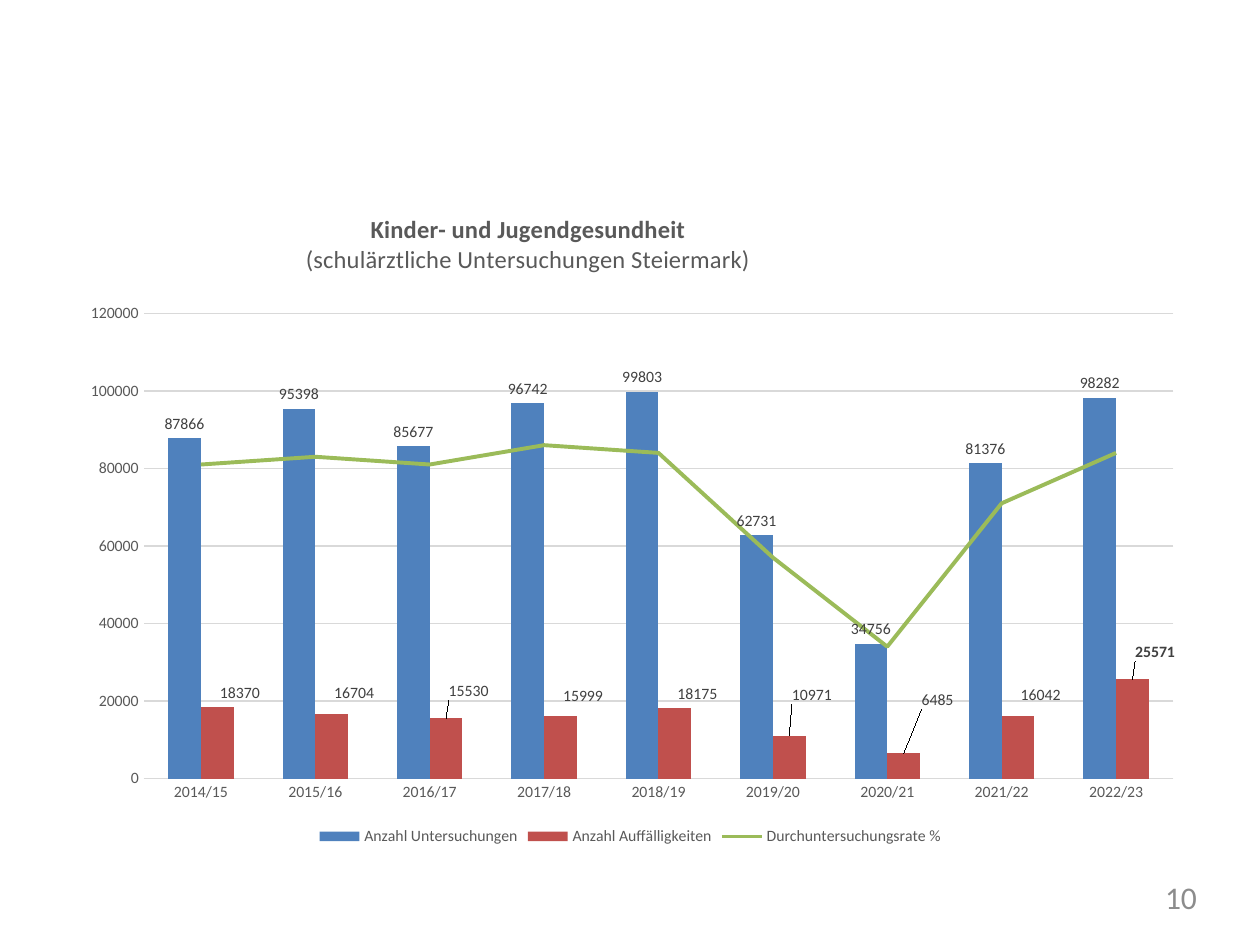
"""Build the slide on school medical examinations in Styria."""
from lxml import etree
from pptx import Presentation
from pptx.chart.data import CategoryChartData
from pptx.dml.color import RGBColor
from pptx.enum.chart import (XL_CHART_TYPE as Chart, XL_LABEL_POSITION as LabelPos,
                             XL_LEGEND_POSITION as LegendPos, XL_TICK_MARK as Tick)
from pptx.enum.text import MSO_AUTO_SIZE as AutoSize, PP_ALIGN as Align
from pptx.oxml import parse_xml
from pptx.oxml.ns import nsdecls, qn
from pptx.util import Cm, Pt

TITLE = [("Kinder- und Jugendgesundheit", True),
         ("(schulärztliche Untersuchungen Steiermark)", False)]
YEARS = ["2014/15", "2015/16", "2016/17", "2017/18", "2018/19",
         "2019/20", "2020/21", "2021/22", "2022/23"]
SERIES = [
    ("Anzahl Untersuchungen",
     [87866, 95398, 85677, 96742, 99803, 62731, 34756, 81376, 98282]),
    ("Anzahl Auffälligkeiten",
     [18370, 16704, 15530, 15999, 18175, 10971, 6485, 16042, 25571]),
    ("Durchuntersuchungsrate %",
     [81000, 83000, 81000, 86000, 84000, 57000, 34000, 71000, 84000]),
]
LABEL_SHIFT = [(0.02, 0), (0.02, -0.01), (0.02, -0.02), (0.02, -0.01), (0.02, 0),
               (0.02, -0.04), (0.03, -0.06), (0.02, -0.01), (0.02, -0.02)]
PAGE = "10"
THEME = {
    "font": "Calibri", "series": ["4F81BD", "C0504D", "9BBB59"],
    "text": "595959", "label": "404040", "grid": "D9D9D9", "page": "8C8C8C",
    "title_size": 14, "small": 9, "page_size": 18,
}


def style(font, size=THEME["small"], color=THEME["text"], bold=False):
    """Apply the theme font with the given format."""
    font.name, font.size, font.bold = THEME["font"], Pt(size), bold
    font.color.rgb = RGBColor.from_string(color)


def write(p, text, align=Align.CENTER, **fmt):
    """Write one formatted run into a paragraph."""
    p.alignment = align
    r = p.add_run()
    r.text = text
    style(r.font, **fmt)


def rule(line, color, width=0.75):
    """Give a line its colour and width."""
    line.color.rgb = RGBColor.from_string(color)
    line.width = Pt(width)


def place(parent, index, **values):
    """Set a manual layout as the child at the given index."""
    for old in parent.findall(qn("c:layout")):
        parent.remove(old)
    layout = parse_xml(f'<c:layout {nsdecls("c")}><c:manualLayout/></c:layout>')
    for tag, value in values.items():
        etree.SubElement(layout[0], qn(f"c:{tag}")).set("val", str(value))
    parent.insert(index, layout)


def label(series):
    """Show the values of a series above its columns."""
    labels = series.data_labels
    labels.show_value = True
    labels.position = LabelPos.OUTSIDE_END
    style(labels.font, color=THEME["label"])


def shift_labels(series):
    """Move each value label and make the last one bold."""
    for i, (dx, dy) in enumerate(LABEL_SHIFT):
        point = series.points[i].data_label
        style(point.font, color=THEME["label"], bold=i == len(YEARS) - 1)
        point.position = LabelPos.OUTSIDE_END
    for item, (dx, dy) in zip(series._element.iter(qn("c:dLbl")), LABEL_SHIFT):
        place(item, 1, x=dx, y=dy)


def turn_into_line(plot, series):
    """Move a column series to a line plot on the same axes."""
    bars, ser = plot._element, series._element
    for old in ser.findall(qn("c:invertIfNegative")):
        ser.remove(old)
    ser.find(qn("c:spPr")).addnext(
        parse_xml(f'<c:marker {nsdecls("c")}><c:symbol val="none"/></c:marker>'))
    etree.SubElement(ser, qn("c:smooth")).set("val", "0")
    line = parse_xml(f'<c:lineChart {nsdecls("c")}><c:grouping val="standard"/>'
                     '<c:varyColors val="0"/></c:lineChart>')
    line.append(ser)
    etree.SubElement(line, qn("c:marker")).set("val", "1")
    for axis in bars.findall(qn("c:axId")):
        etree.SubElement(line, qn("c:axId")).set("val", axis.get("val"))
    bars.addnext(line)


def add_title(chart):
    """Write the two-line chart title."""
    chart.has_title = True
    tf = chart.chart_title.text_frame
    for i, (text, bold) in enumerate(TITLE):
        p = tf.paragraphs[0] if i == 0 else tf.add_paragraph()
        write(p, text, size=THEME["title_size"], bold=bold)
    place(chart._chartSpace.find(".//" + qn("c:title")), 1,
          xMode="edge", yMode="edge", x=0.21, y=0.02)


def format_axes(chart):
    """Format both axes and the gridlines."""
    for axis in (chart.category_axis, chart.value_axis):
        axis.major_tick_mark = axis.minor_tick_mark = Tick.NONE
        style(axis.tick_labels.font)
    rule(chart.category_axis.format.line, THEME["grid"])
    values = chart.value_axis
    values.minimum_scale, values.maximum_scale, values.major_unit = 0, 120000, 20000
    values.format.line.fill.background()
    rule(values.major_gridlines.format.line, THEME["grid"])


def add_chart(slide):
    """Add the combined column and line chart."""
    data = CategoryChartData(number_format="General")
    data.categories = YEARS
    for name, values in SERIES:
        data.add_series(name, values)
    chart = slide.shapes.add_chart(Chart.COLUMN_CLUSTERED, Cm(1.3), Cm(3.94),
                                   Cm(22.81), Cm(13.21), data).chart
    style(chart.font, size=10, color="000000")
    add_title(chart)
    format_axes(chart)
    chart.has_legend = True
    chart.legend.position = LegendPos.BOTTOM
    chart.legend.include_in_layout = False
    style(chart.legend.font)
    plot = chart.plots[0]
    plot.gap_width, plot.overlap, plot.vary_by_categories = 150, 0, False
    exams, findings, rate = plot.series
    for series, color in zip((exams, findings), THEME["series"]):
        series.format.fill.solid()
        series.format.fill.fore_color.rgb = RGBColor.from_string(color)
        label(series)
    shift_labels(findings)
    rule(rate.format.line, THEME["series"][2], 2.25)
    turn_into_line(plot, rate)
    place(chart._chartSpace.find(".//" + qn("c:plotArea")), 0, layoutTarget="inner",
          xMode="edge", yMode="edge", x=0.07, y=0.18, w=0.91, h=0.71)


def add_page_number(slide):
    """Write the page number at the bottom right."""
    tf = slide.shapes.add_textbox(Cm(18.29), Cm(17.7), Cm(5.84), Cm(0.97)).text_frame
    tf.margin_left = tf.margin_right = tf.margin_top = tf.margin_bottom = 0
    tf.word_wrap = True
    tf.auto_size = AutoSize.SHAPE_TO_FIT_TEXT
    write(tf.paragraphs[0], PAGE, align=Align.RIGHT,
          size=THEME["page_size"], color=THEME["page"])


def main():
    """Build and save the presentation."""
    prs = Presentation()
    prs.slide_width, prs.slide_height = Cm(25.4), Cm(19.05)
    slide = prs.slides.add_slide(prs.slide_layouts[6])
    add_chart(slide)
    add_page_number(slide)
    prs.save("out.pptx")


if __name__ == "__main__":
    main()
